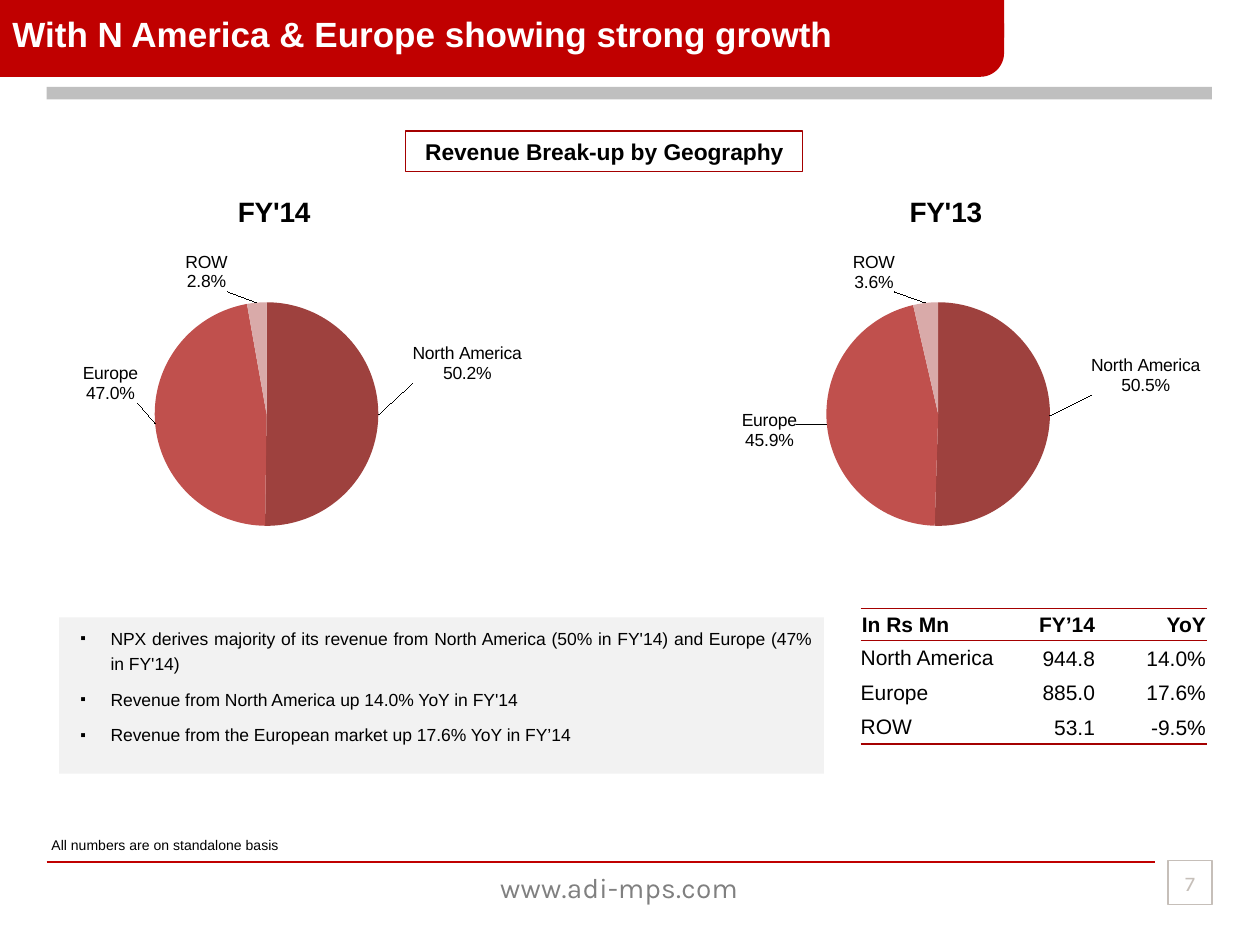
from lxml import etree
from pptx import Presentation
from pptx.chart.data import CategoryChartData
from pptx.dml.color import RGBColor
from pptx.enum import chart as ch, shapes, text
from pptx.oxml import parse_xml
from pptx.oxml.ns import nsdecls, qn
from pptx.util import Pt

RED = RGBColor(0xC0, 0, 0)
DARK_RED = RGBColor(0xA4, 0, 0)
GREY = RGBColor(0xBF, 0xBF, 0xBF)
PALE = RGBColor(0xF2, 0xF2, 0xF2)
TAUPE = RGBColor(0xC6, 0xBF, 0xB9)
MID_GREY = RGBColor(0x80, 0x80, 0x80)
WHITE = RGBColor(255, 255, 255)
BLACK = RGBColor(0, 0, 0)
SLICES = [RGBColor(0x9E, 0x41, 0x3E), RGBColor(0xC0, 0x50, 0x4D), RGBColor(0xD9, 0xAA, 0xA9)]

LEFT, CENTER, RIGHT, JUSTIFY = (text.PP_ALIGN.LEFT, text.PP_ALIGN.CENTER,
                                text.PP_ALIGN.RIGHT, text.PP_ALIGN.JUSTIFY)
TOP, MIDDLE = text.MSO_ANCHOR.TOP, text.MSO_ANCHOR.MIDDLE
RECT, ROUND = shapes.MSO_SHAPE.RECTANGLE, shapes.MSO_SHAPE.ROUNDED_RECTANGLE

REGIONS = ["North America", "Europe", "ROW"]
PIES = [
    ("FY'14", -7.2, [50.2, 47.0, 2.8], [(0.044, -0.14), (-0.016, -0.11), (-0.047, -0.01)]),
    ("FY'13", 376.6, [50.5, 45.9, 3.6], [(0.055, -0.11), (-0.037, -0.04), (-0.049, -0.01)]),
]
BULLETS = [
    "NPX derives majority of its revenue from North America (50% in FY'14) and Europe (47% in FY'14)",
    "Revenue from North America up 14.0% YoY in FY'14",
    "Revenue from the European market up 17.6% YoY in FY’14",
]
ROWS = [
    ("In Rs Mn", "FY’14", "YoY"),
    ("North America", "944.8", "14.0%"),
    ("Europe", "885.0", "17.6%"),
    ("ROW", "53.1", "-9.5%"),
]
COL_WIDTHS = [80.6, 54, 63.4]
ROW_HEIGHTS = [18.3, 20.2, 19.4, 19.6]
RULED_EDGES = {0: ("lnT", "lnB"), 1: ("lnT",), 3: ("lnB",)}
BANNER = [
    (RECT, (26.6, 49.7, 666, 7.2), GREY),
    (RECT, (0, 0, 166.3, 43.9), RED),
    (RECT, (407.5, 0, 166.3, 21.6), RED),
    (ROUND, (0, 0, 573.8, 43.9), RED),
]

prs = Presentation()
prs.slide_width, prs.slide_height = Pt(720), Pt(540)
s = prs.slides.add_slide(prs.slide_layouts[6])


def set_font(font, size, color=BLACK, bold=False, name="Arial"):
    for key, value in dict(size=Pt(size), bold=bold, name=name).items():
        setattr(font, key, value)
    font.color.rgb = color


def add_box(kind, at, fill=None, line=None):
    sp = s.shapes.add_shape(kind, *map(Pt, at))
    sp.shadow.inherit = False
    if fill is None:
        sp.fill.background()
    else:
        sp.fill.solid()
        sp.fill.fore_color.rgb = fill
    if line is None:
        sp.line.fill.background()
    else:
        sp.line.color.rgb, sp.line.width = line, Pt(0.75)
    return sp


def write(sp, words, size, align=LEFT, anchor=TOP, wrap=True, **font):
    tf = sp.text_frame
    tf.word_wrap, tf.vertical_anchor = wrap, anchor
    p = tf.paragraphs[0]
    p.alignment = align
    r = p.add_run()
    r.text = words
    set_font(r.font, size, **font)
    return r


def add_text(at, *args, **kw):
    return write(s.shapes.add_textbox(*map(Pt, at)), *args, **kw)


def add_bullets(tf):
    tf.word_wrap, tf.vertical_anchor = True, TOP
    for i, words in enumerate(BULLETS):
        p = tf.paragraphs[0] if i == 0 else tf.add_paragraph()
        for key, value in dict(alignment=JUSTIFY, line_spacing=1.2, space_after=Pt(6)).items():
            setattr(p, key, value)
        pPr = p._p.get_or_add_pPr()
        pPr.set("marL", str(Pt(22.3)))
        pPr.set("indent", str(-Pt(17.3)))
        etree.SubElement(pPr, qn("a:buSzPct"), val="90000")
        etree.SubElement(pPr, qn("a:buFont"), typeface="Arial")
        etree.SubElement(pPr, qn("a:buChar"), char="▪")
        r = p.add_run()
        r.text = words
        set_font(r.font, 10)


def add_table(left, top):
    table = s.shapes.add_table(len(ROWS), len(COL_WIDTHS), Pt(left), Pt(top),
                               Pt(sum(COL_WIDTHS)), Pt(sum(ROW_HEIGHTS))).table
    table.first_row = table.horz_banding = False
    for col, width in zip(table.columns, COL_WIDTHS):
        col.width = Pt(width)
    for i, (row, height) in enumerate(zip(table.rows, ROW_HEIGHTS)):
        row.height = Pt(height)
        for j, cell in enumerate(row.cells):
            inset = 0 if i and not j else Pt(0.7)
            for key, value in dict(margin_left=inset, margin_right=inset, margin_top=inset,
                                   margin_bottom=0, vertical_anchor=MIDDLE).items():
                setattr(cell, key, value)
            p = cell.text_frame.paragraphs[0]
            p.alignment = RIGHT if j else LEFT
            r = p.add_run()
            r.text = ROWS[i][j]
            set_font(r.font, 12, bold=i == 0)
            tcPr = cell._tc.get_or_add_tcPr()
            for edge in ("lnL", "lnR", "lnT", "lnB"):
                ruled = edge in RULED_EDGES.get(i, ())
                ln = etree.SubElement(tcPr, qn("a:" + edge), w=str(Pt(1) if ruled else 0))
                if ruled:
                    fill = etree.SubElement(ln, qn("a:solidFill"))
                    etree.SubElement(fill, qn("a:srgbClr"), val=str(DARK_RED))
                else:
                    etree.SubElement(ln, qn("a:noFill"))
            cell.fill.background()


def layout_xml(x, y, w=None, h=None, edge=True):
    parts = '<c:layoutTarget val="inner"/>' if w else ""
    if edge:
        parts += '<c:xMode val="edge"/><c:yMode val="edge"/>'
    sizes = [(k, v) for k, v in zip("xywh", (x, y, w, h)) if v is not None]
    parts += "".join(f'<c:{k} val="{v}"/>' for k, v in sizes)
    return f"<c:layout><c:manualLayout>{parts}</c:manualLayout></c:layout>"


def labels_xml(offsets):
    shown = ('<c:numFmt formatCode="0.0%" sourceLinked="0"/><c:dLblPos val="outEnd"/>'
             '<c:showLegendKey val="0"/><c:showVal val="0"/><c:showCatName val="1"/>'
             '<c:showSerName val="0"/><c:showPercent val="1"/><c:showBubbleSize val="0"/>'
             '<c:separator>\n</c:separator>')
    points = "".join(f'<c:dLbl><c:idx val="{i}"/>{layout_xml(x, y, edge=False)}{shown}</c:dLbl>'
                     for i, (x, y) in enumerate(offsets))
    return (f'<c:dLbls {nsdecls("c")}>{points}{shown}<c:showLeaderLines val="1"/></c:dLbls>')


def add_pie(name, left, values, offsets):
    data = CategoryChartData()
    data.categories = REGIONS
    data.add_series(name, values)
    chart = s.shapes.add_chart(ch.XL_CHART_TYPE.PIE, Pt(left), Pt(101.5),
                               Pt(350.6), Pt(209.5), data).chart
    set_font(chart.font, 10)
    chart.has_legend, chart.has_title = False, True
    title = chart.chart_title
    title.text_frame.text = name
    set_font(title.text_frame.paragraphs[0].runs[0].font, 16, bold=True)
    title.include_in_layout = False
    plot = chart.plots[0]
    plot.vary_by_categories = True
    series = plot.series[0]
    for i, color in enumerate(SLICES):
        fill = series.points[i].format.fill
        fill.solid()
        fill.fore_color.rgb = color
    series._element.find(qn("c:cat")).addprevious(parse_xml(labels_xml(offsets)))
    for parent, box in ((title._element, (0.4, 0.03)),
                        (chart._chartSpace.chart.plotArea, (0.27, 0.34, 0.37, 0.61))):
        for old in parent.findall(qn("c:layout")):
            parent.remove(old)
        new = parse_xml(layout_xml(*box).replace("<c:layout>", f'<c:layout {nsdecls("c")}>'))
        tx = parent.find(qn("c:tx"))
        if tx is None:
            parent.insert(0, new)
        else:
            tx.addnext(new)


page = add_box(RECT, (667.4, 491.8, 25.2, 25.2), line=TAUPE)
for side in ("left", "right", "top", "bottom"):
    setattr(page.text_frame, "margin_" + side, 0)
write(page, "7", 12, CENTER, MIDDLE, color=TAUPE, name="Karla")
web = add_text((43.9, 493.9, 619.9, 26.6), "www.adi-mps.com", 16, CENTER, color=MID_GREY, name="Karla")
web._r.get_or_add_rPr().set("spc", "20")

rule = s.shapes.add_connector(shapes.MSO_CONNECTOR.STRAIGHT, Pt(26.6), Pt(492.5), Pt(660.2), Pt(492.5))
rule.line.color.rgb, rule.line.width = RED, Pt(0.75)
etree.SubElement(rule._element.spPr, qn("a:effectLst"))

for kind, at, fill in BANNER:
    sp = add_box(kind, at, fill)
    if kind == ROUND:
        sp.adjustments[0] = 0.31

add_text((0, 3.6, 556.6, 48.2), "With N America & Europe showing strong growth", 20, color=WHITE, bold=True)
write(add_box(RECT, (231.8, 74.9, 226.8, 23), line=DARK_RED),
      "Revenue Break-up by Geography", 13, CENTER, bold=True)
add_table(491.8, 347.8)
add_bullets(add_box(RECT, (33.8, 352.8, 437, 89.3), PALE).text_frame)
for pie in PIES:
    add_pie(*pie)
add_text((22.3, 474.5, 145.4, 17.3), "All numbers are on standalone basis", 8, wrap=False)

prs.save("out.pptx")
